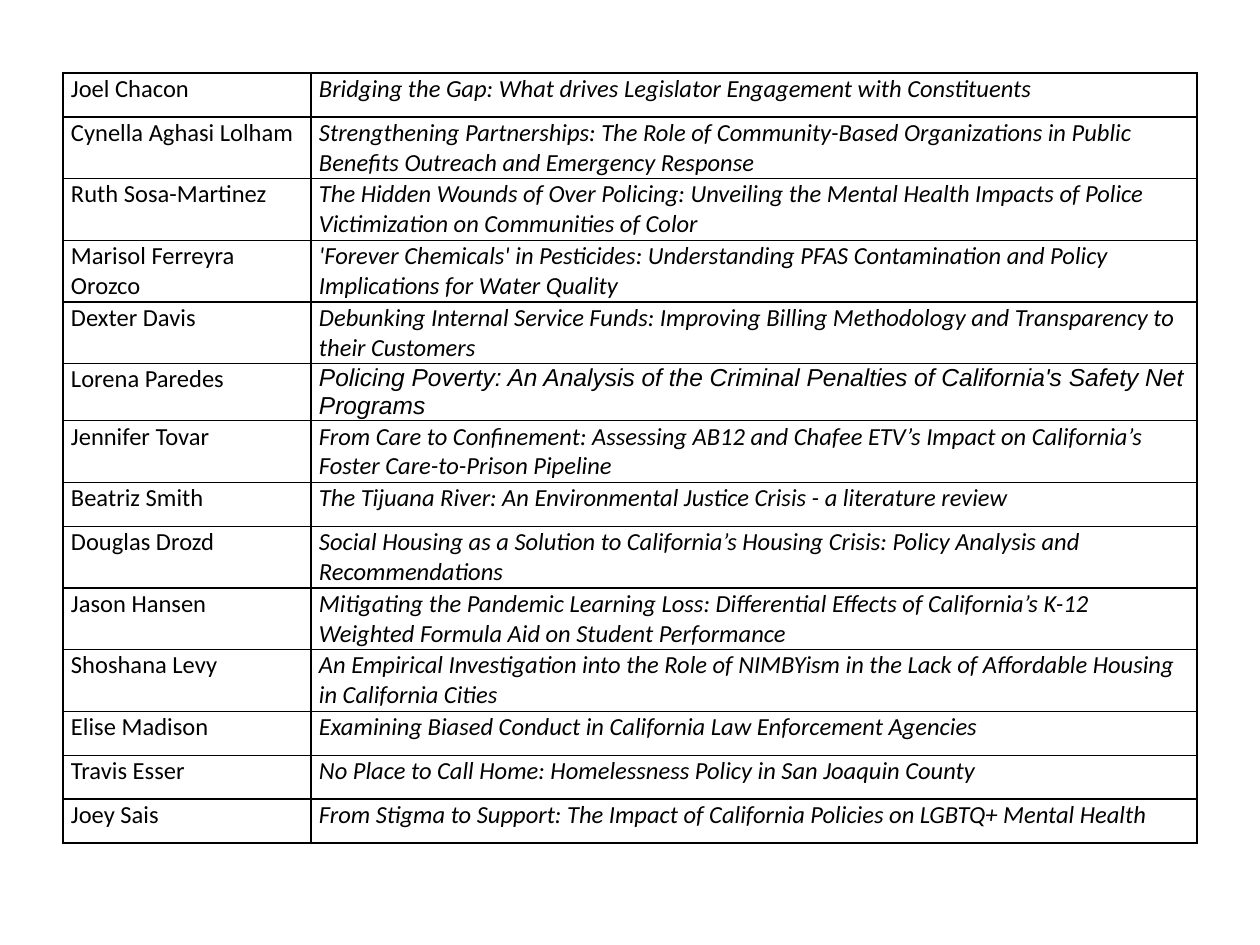
from lxml.etree import SubElement as Sub
from pptx import Presentation
from pptx.dml.color import RGBColor as RGB
from pptx.oxml.ns import qn
from pptx.util import Pt

SCALE = 914400 / 126  # EMU per px
HUES = {"ink": "000000"}
BODY, ALT = "Calibri", "Arial"

# Name, title and, where it differs, the title font
TALKS = [
    ("Joel Chacon", "Bridging the Gap: What drives Legislator Engagement with Constituents"),
    ("Cynella Aghasi Lolham", "Strengthening Partnerships: The Role of Community-Based Organizations "
     "in Public Benefits Outreach and Emergency Response"),
    ("Ruth Sosa-Martinez", "The Hidden Wounds of Over Policing: Unveiling the Mental Health Impacts "
     "of Police Victimization on Communities of Color"),
    ("Marisol Ferreyra Orozco", "'Forever Chemicals' in Pesticides: Understanding PFAS Contamination "
     "and Policy Implications for Water Quality"),
    ("Dexter Davis", "Debunking Internal Service Funds: Improving Billing Methodology "
     "and Transparency to their Customers"),
    ("Lorena Paredes", "Policing Poverty: An Analysis of the Criminal Penalties "
     "of California's Safety Net Programs", ALT),
    ("Jennifer Tovar", "From Care to Confinement: Assessing AB12 and Chafee ETV’s Impact "
     "on California’s Foster Care-to-Prison Pipeline"),
    ("Beatriz Smith", "The Tijuana River: An Environmental Justice Crisis - a literature review"),
    ("Douglas Drozd", "Social Housing as a Solution to California’s Housing Crisis: "
     "Policy Analysis and Recommendations"),
    ("Jason Hansen", "Mitigating the Pandemic Learning Loss: Differential Effects "
     "of California’s K-12 Weighted Formula Aid on Student Performance"),
    ("Shoshana Levy", "An Empirical Investigation into the Role of NIMBYism "
     "in the Lack of Affordable Housing in California Cities"),
    ("Elise Madison", "Examining Biased Conduct in California Law Enforcement Agencies"),
    ("Travis Esser", "No Place to Call Home: Homelessness Policy in San Joaquin County"),
    ("Joey Sais", "From Stigma to Support: The Impact of California Policies on LGBTQ+ Mental Health"),
]
TALL = {1, 2, 4}  # rows with a larger minimum height


def px(n):
    return round(n * SCALE)


def apply(obj, vals):
    for key, val in vals.items():
        setattr(obj, key, val)


class Deck:
    pads = {"margin_left": px(8), "margin_right": px(8),
            "margin_top": px(1), "margin_bottom": px(1)}
    plain = {"first_row": False, "horz_banding": False}

    def __init__(self, wide, high):
        self.prs = Presentation()
        apply(self.prs, {"slide_width": px(wide), "slide_height": px(high)})
        self.slide = self.prs.slides.add_slide(self.prs.slide_layouts[6])

    def edge(self, cell):
        props = cell._tc.get_or_add_tcPr()
        for side in "LRTB":
            line = Sub(props, qn(f"a:ln{side}"), w=str(Pt(1)))
            fill = Sub(line, qn("a:solidFill"))
            Sub(fill, qn("a:srgbClr"), val=HUES["ink"])

    def cell(self, cell, text, font, italic):
        self.edge(cell)
        cell.fill.background()
        apply(cell, self.pads)
        run = cell.text_frame.paragraphs[0].add_run()
        run.text = text
        apply(run.font, {"name": font, "size": Pt(14), "italic": italic})
        run.font.color.rgb = RGB.from_string(HUES["ink"])

    def table(self, left, top, cols, highs, rows):
        frame = self.slide.shapes.add_table(
            len(rows), len(cols), px(left), px(top), px(sum(cols)), px(sum(highs)))
        grid = frame.table
        apply(grid, self.plain)
        for col, wide in zip(grid.columns, cols):
            col.width = px(wide)
        for row, high, (name, title, *face) in zip(grid.rows, highs, rows):
            row.height = px(high)
            self.cell(row.cells[0], name, BODY, False)
            self.cell(row.cells[1], title, face[0] if face else BODY, True)


def main():
    deck = Deck(1260, 945)
    # Speakers and their talks
    highs = [48 if i in TALL else 44 for i in range(len(TALKS))]
    deck.table(63, 73, [248, 886], highs, TALKS)
    deck.prs.save("out.pptx")


if __name__ == "__main__":
    main()
